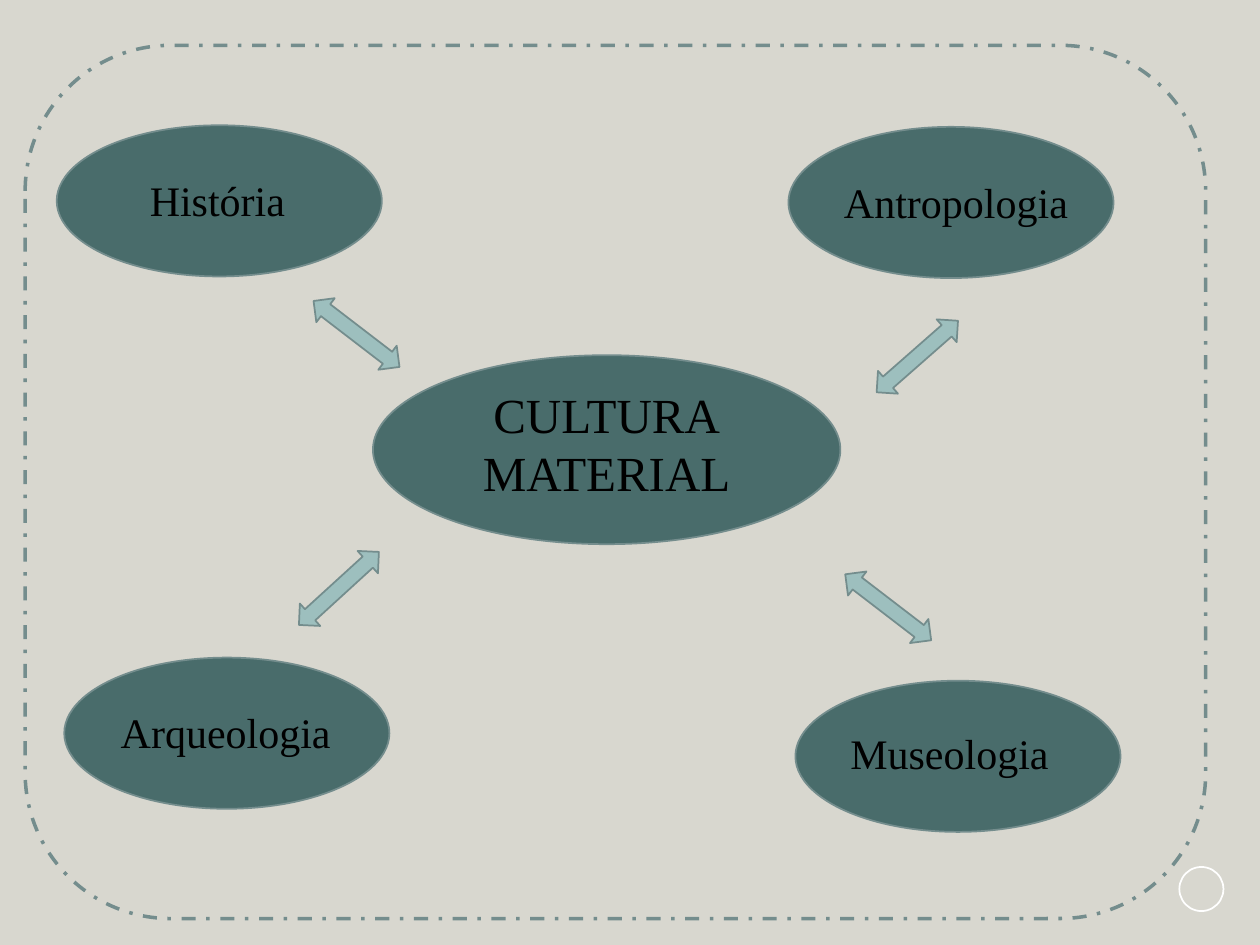
import pptx
import pptx.util
from pptx.dml.color import RGBColor
from pptx.enum.dml import MSO_LINE
from pptx.enum.shapes import MSO_SHAPE
from pptx.enum.text import MSO_AUTO_SIZE, PP_ALIGN

Pt = pptx.util.Pt

BACKGROUND = RGBColor(0xD8, 0xD7, 0xCF)
OVAL_FILL = RGBColor(0x49, 0x6C, 0x6B)
ARROW_FILL = RGBColor(0x9D, 0xBF, 0xBE)
OUTLINE = RGBColor(0x74, 0x8D, 0x8D)
WHITE = RGBColor(0xFF, 0xFF, 0xFF)
BLACK = RGBColor(0x00, 0x00, 0x00)
FONT = "Times New Roman"

# Lengths in points: oval left and top; label text, left, top and width
FIELD_SIZE = (185.8, 86.4)
FIELDS = [
    ((36.7, 375.8), ("Arqueologia", 61.9, 400.3, 135.4)),
    ((454.5, 389), ("Museologia", 478.8, 412.2, 128.9)),
    ((450.5, 72.5), ("Antropologia", 475.2, 97.5, 144)),
    ((32.4, 71.6), ("História", 78.5, 96.3, 92.9)),
]
CENTRE_OVAL = (213.1, 203, 267.1, 108)
CENTRE_TEXT = ("CULTURA\nMATERIAL", 267.8, 216, 157.7, 74.9)

# Arrow left, top and rotation in degrees
ARROW_SIZE = (61.9, 17.3)
ARROWS = [
    (172.8, 182.2, 37.5),
    (493.2, 195.1, 138.7),
    (162.7, 327.6, 137.6),
    (476.6, 338.4, 37.5),
]
FRAME = (14.4, 25.9, 674.6, 499)
PAGE_CIRCLE = (673.9, 495.4, 25.2, 25.2)


def add_outlined(page, kind, place, fill=None, line=OUTLINE, width=1):
    shape = page.shapes.add_shape(kind, *map(Pt, place))
    shape.shadow.inherit = False
    if fill is None:
        shape.fill.background()
    else:
        shape.fill.solid()
        shape.fill.fore_color.rgb = fill
    shape.line.color.rgb = line
    shape.line.width = Pt(width)
    return shape


def add_label(page, text, place, size, align):
    box = page.shapes.add_textbox(*map(Pt, place))
    frame = box.text_frame
    frame.word_wrap = False
    frame.auto_size = MSO_AUTO_SIZE.SHAPE_TO_FIT_TEXT
    frame.text = text
    for para in frame.paragraphs:
        para.alignment = align
        for span in para.runs:
            span.font.name = FONT
            span.font.size = Pt(size)
            span.font.color.rgb = BLACK


def main():
    deck = pptx.Presentation()
    deck.slide_width, deck.slide_height = Pt(720), Pt(540)
    page = deck.slides.add_slide(deck.slide_layouts[6])
    page.background.fill.solid()
    page.background.fill.fore_color.rgb = BACKGROUND

    add_outlined(page, MSO_SHAPE.OVAL, PAGE_CIRCLE, line=WHITE)
    for corner, _ in FIELDS:
        add_outlined(page, MSO_SHAPE.OVAL, corner + FIELD_SIZE, OVAL_FILL)
    add_outlined(page, MSO_SHAPE.OVAL, CENTRE_OVAL, OVAL_FILL)

    text, *place = CENTRE_TEXT
    add_label(page, text, place, 28, PP_ALIGN.CENTER)
    for _, (text, *place) in FIELDS:
        add_label(page, text, (*place, 36), 24, PP_ALIGN.LEFT)

    for left, top, angle in ARROWS:
        arrow = add_outlined(page, MSO_SHAPE.LEFT_RIGHT_ARROW,
                             (left, top, *ARROW_SIZE), ARROW_FILL)
        arrow.rotation = angle

    frame = add_outlined(page, MSO_SHAPE.ROUNDED_RECTANGLE, FRAME, width=2)
    frame.line.dash_style = MSO_LINE.DASH_DOT

    deck.save("out.pptx")


if __name__ == "__main__":
    main()
